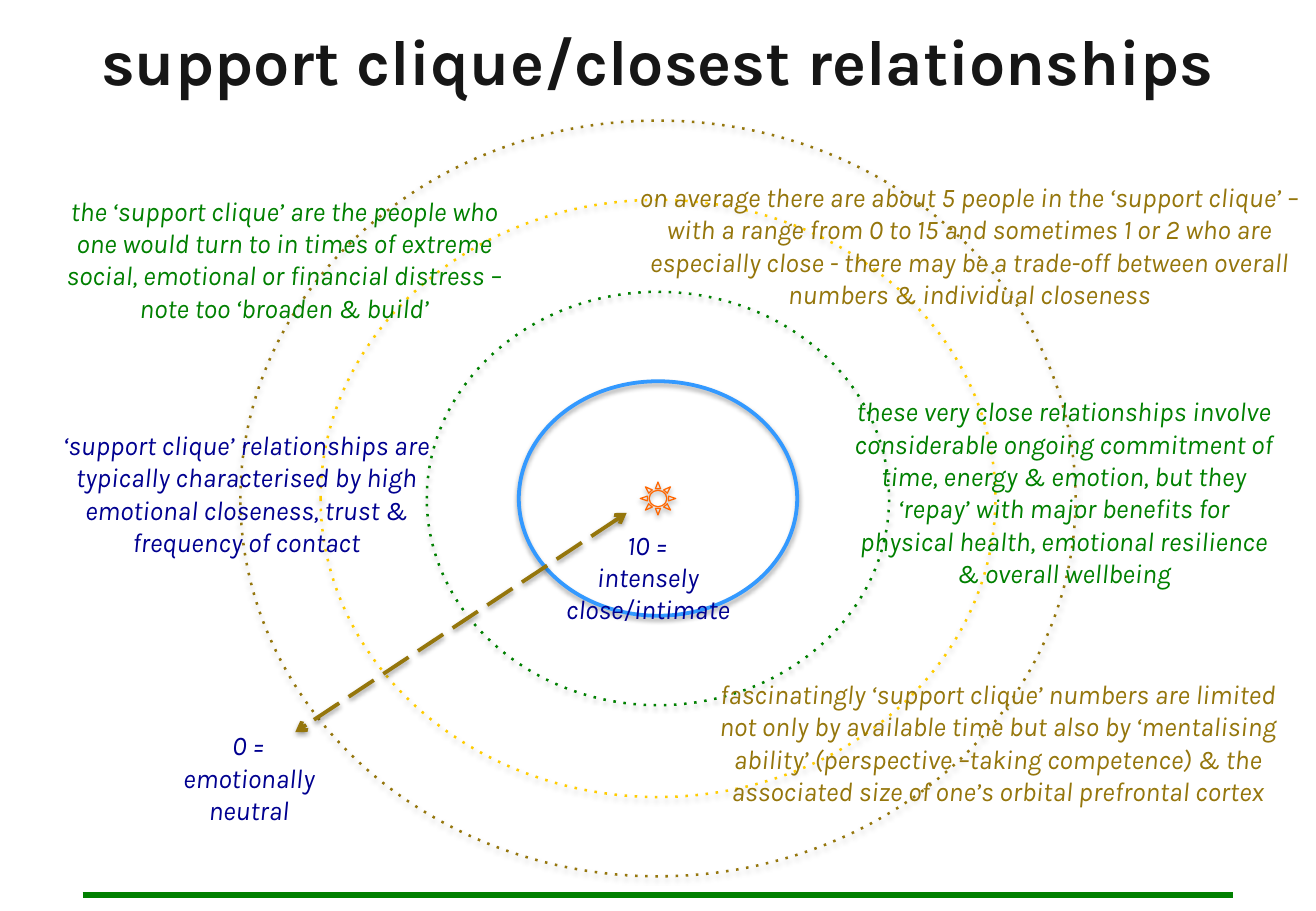
from lxml import etree
from pptx import Presentation
from pptx.dml.color import RGBColor
from pptx.enum import shapes, text
from pptx.oxml import ns
from pptx.util import Pt

FONT = "Karla"
INK, BROWN, GREEN, NAVY = "161616", "95760C", "008000", "000090"
BLUE, YELLOW, ORANGE = "3399FF", "FFCC00", "FF6600"
OVAL = shapes.MSO_SHAPE.OVAL


def colour(value):
    return RGBColor.from_string(value)


def add_xml(parent, tag, **attributes):
    return etree.SubElement(parent, ns.qn(tag), attributes)


def write(holder, *lines, size=16, color=INK, bold=False, italic=False,
          anchor=text.MSO_ANCHOR.TOP):
    frame = holder.text_frame
    frame.word_wrap = True
    frame.auto_size = text.MSO_AUTO_SIZE.NONE
    frame.vertical_anchor = anchor
    frame.text = "\n".join(lines)
    for paragraph in frame.paragraphs:
        paragraph.alignment = text.PP_ALIGN.CENTER
        paragraph.space_before = Pt(0)
        font = paragraph.font
        font.name, font.size = FONT, Pt(size)
        font.bold, font.italic = bold, italic
        font.color.rgb = colour(color)


def stroke(outline, color, width, dash=None, arrows=False):
    outline.line.color.rgb = colour(color)
    outline.line.width = Pt(width)
    ln = outline.line._get_or_add_ln()
    if dash:
        add_xml(ln, "a:prstDash", val=dash)
    if arrows:
        add_xml(ln, "a:headEnd", type="arrow")
        add_xml(ln, "a:tailEnd", type="arrow")


def shade(effects, alpha, distance):
    shadow = add_xml(effects, "a:outerShdw", blurRad=str(Pt(3.1)),
                     dist=str(Pt(distance)), dir="5400000", rotWithShape="0")
    black = add_xml(shadow, "a:srgbClr", val="000000")
    add_xml(black, "a:alpha", val=str(alpha * 1000))


def add_heading(slide, left, top, width, height):
    heading = slide.shapes.title
    heading.left, heading.top = Pt(left), Pt(top)
    heading.width, heading.height = Pt(width), Pt(height)
    write(heading, "support clique/closest relationships", size=38, bold=True,
          anchor=text.MSO_ANCHOR.BOTTOM)


def add_circles(slide, left, top, width, height):
    circles = [
        (OVAL, width, height, BROWN, 1.5, "dot"),
        (OVAL, 165, 139, BLUE, 2.25, None),
        (shapes.MSO_SHAPE.SUN, 21, 19.5, ORANGE, 0.75, None),
        (OVAL, 274, 245, GREEN, 1.5, "dot"),
        (OVAL, 400, 354, YELLOW, 1.5, "dot"),
    ]
    for kind, across, down, color, weight, dash in circles:
        circle = slide.shapes.add_shape(
            kind, Pt(left + (width - across) / 2), Pt(top + (height - down) / 2),
            Pt(across), Pt(down))
        circle.fill.background()
        stroke(circle, color, weight, dash)
        circle.shadow.inherit = False
        shade(circle._element.spPr.find(ns.qn("a:effectLst")), 35, 1.8)


def add_rule(slide, x1, y1, x2, y2, *style, shadow=False, **options):
    rule = slide.shapes.add_connector(
        shapes.MSO_CONNECTOR.STRAIGHT, Pt(x1), Pt(y1), Pt(x2), Pt(y2))
    stroke(rule, *style, **options)
    effects = add_xml(rule._element.spPr, "a:effectLst")
    if shadow:
        shade(effects, 38, 1.6)


def add_note(slide, left, top, width, height, color, *lines):
    note = slide.shapes.add_textbox(Pt(left), Pt(top), Pt(width), Pt(height))
    write(note, *lines, color=color, italic=True)


def main():
    deck = Presentation()
    deck.slide_width, deck.slide_height = Pt(780), Pt(540)
    slide = deck.slides.add_slide(deck.slide_layouts[5])

    add_heading(slide, 0, 15, 780, 47)
    add_circles(slide, 142.5, 71.5, 495, 448)
    add_rule(slide, 49, 530.5, 731, 530.5, GREEN, 3.25)
    add_rule(slide, 371.5, 304, 175, 434, BROWN, 2.25, "lgDash",
             arrows=True, shadow=True)

    notes = [
        (83, 428.5, 129, 66, NAVY, "0 =", "emotionally neutral"),
        (310, 309.5, 148, 66, NAVY, "10 =", "intensely close/intimate"),
        (371.5, 103.5, 406, 104, BROWN,
         "on average there are about 5 people in the ‘support clique’ – "
         "with a range from 0 to 15 and sometimes 1 or 2 who are especially "
         "close - there may be a trade-off between overall numbers & "
         "individual closeness"),
        (497.5, 230.5, 266, 143, GREEN,
         "these very close relationships involve considerable ongoing "
         "commitment of time, energy & emotion, but they ‘repay’ with major "
         "benefits for physical health, emotional resilience & overall "
         "wellbeing"),
        (17, 250.5, 258, 85, NAVY,
         "‘support clique’ relationships are typically characterised by high "
         "emotional closeness, trust & frequency of contact"),
        (418.5, 398, 346, 104, BROWN,
         "fascinatingly ‘support clique’ numbers are limited not only by "
         "available time but also by ‘mentalising ability’ (perspective "
         "–taking competence) & the associated size of one’s orbital "
         "prefrontal cortex"),
        (27.5, 111.5, 282, 104, GREEN,
         "the ‘support clique’ are the people who one would turn to in times "
         "of extreme social, emotional or financial distress – note too "
         "‘broaden & build’"),
    ]
    for note in notes:
        add_note(slide, *note)

    deck.save("out.pptx")


if __name__ == "__main__":
    main()
